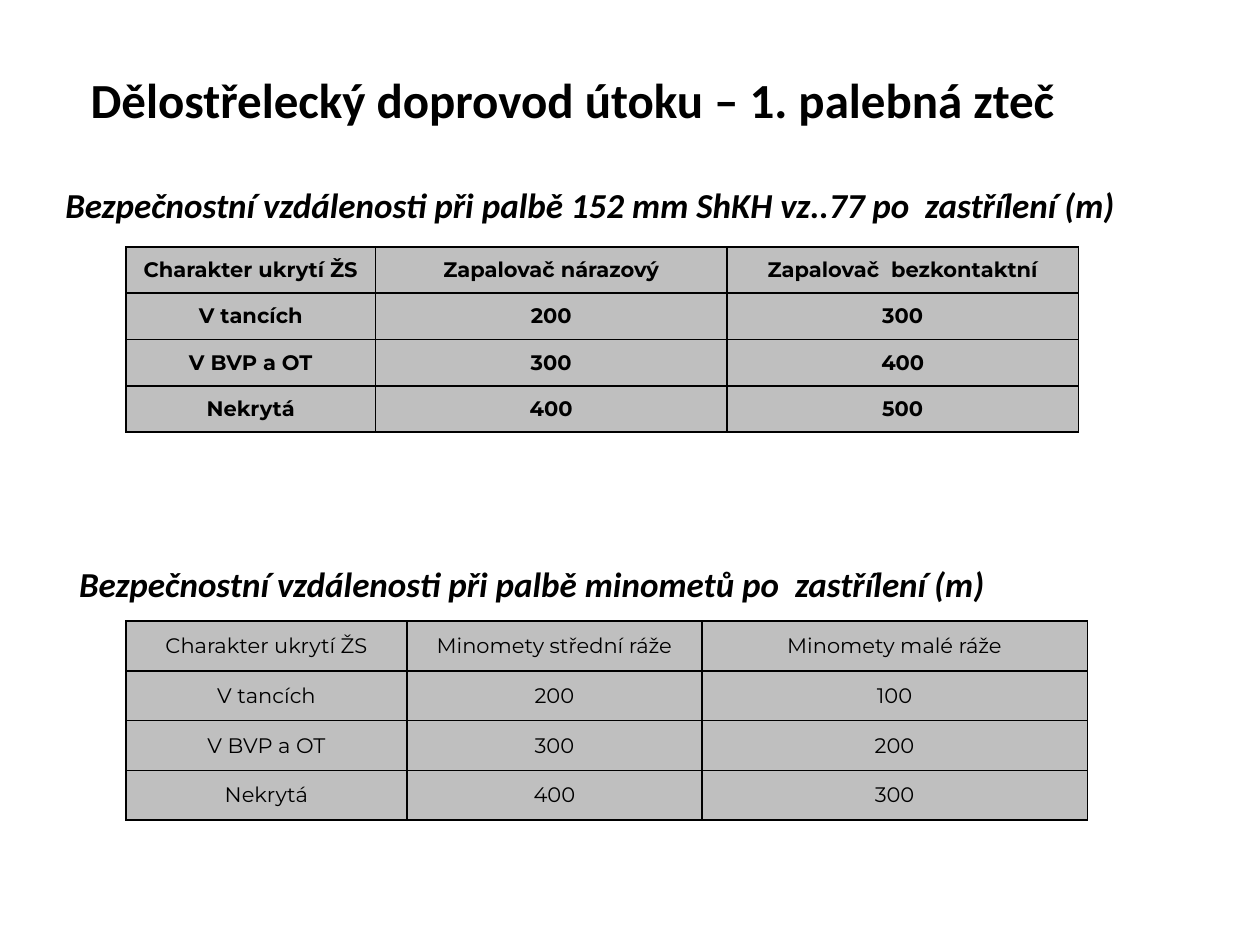
"""Build a slide with two tables of safety distances for artillery fire."""
from dataclasses import dataclass

import lxml.etree
import pptx
import pptx.dml.color
import pptx.enum.text
import pptx.oxml.ns
import pptx.util

COLORS = {"page": "FFFFFF", "ink": "000000", "cell": "BFBFBF"}
WIDTH = pptx.util.Inches(10)
HEIGHT = pptx.util.Inches(7.5)
MIDDLE = pptx.enum.text.MSO_ANCHOR.MIDDLE
TOP = pptx.enum.text.MSO_ANCHOR.TOP


@dataclass(frozen=True)
class Style:
    font: str
    size: int
    bold: bool = False
    italic: bool = False


@dataclass(frozen=True)
class Heading:
    text: str
    left: float
    top: float
    width: float
    height: float
    style: Style
    indent: float = 0
    wrap: bool = True
    anchor: pptx.enum.text.MSO_ANCHOR = MIDDLE


@dataclass(frozen=True)
class DistanceTable:
    left: float
    top: float
    columns: tuple[float, ...]
    row_height: float
    style: Style
    rows: tuple[tuple[str, ...], ...]


TITLE = Style("Calibri", 28, bold=True)
CAPTION = Style("Calibri", 20, bold=True, italic=True)

HEADINGS = (
    Heading("Dělostřelecký doprovod útoku – 1. palebná zteč",
            6.2, 6.67, 83.5, 7.6, TITLE, wrap=False, anchor=TOP),
    Heading("Bezpečnostní vzdálenosti při palbě 152 mm ShKH vz..77 po  zastřílení (m)",
            1.2, 18.67, 90.6, 5.87, CAPTION, indent=3),
    Heading("Bezpečnostní vzdálenosti při palbě minometů po  zastřílení (m)",
            2.8, 58.8, 79.6, 5.87, CAPTION, indent=2.5),
)

TABLES = (
    DistanceTable(10, 26.13, (19.8, 27.9, 27.9), 4.9, Style("Montserrat", 12, bold=True), (
        ("Charakter ukrytí ŽS", "Zapalovač nárazový", "Zapalovač  bezkontaktní"),
        ("V tancích", "200", "300"),
        ("V BVP a OT", "300", "400"),
        ("Nekrytá", "400", "500"),
    )),
    DistanceTable(10, 65.73, (22.3, 23.4, 30.6), 5.27, Style("Montserrat", 12), (
        ("Charakter ukrytí ŽS", "Minomety střední ráže", "Minomety malé ráže"),
        ("V tancích", "200", "100"),
        ("V BVP a OT", "300", "200"),
        ("Nekrytá", "400", "300"),
    )),
)


def across(percent: float) -> int:
    return round(WIDTH * percent / 100)


def down(percent: float) -> int:
    return round(HEIGHT * percent / 100)


def color(name: str) -> pptx.dml.color.RGBColor:
    return pptx.dml.color.RGBColor.from_string(COLORS[name])


def add_span(para, text: str, style: Style) -> None:
    span = para.add_run()
    span.text = text
    span.font.name = style.font
    span.font.size = pptx.util.Pt(style.size)
    span.font.bold = style.bold
    span.font.italic = style.italic
    span.font.color.rgb = color("ink")


def draw_heading(page, heading: Heading) -> None:
    box = page.shapes.add_textbox(across(heading.left), down(heading.top),
                                  across(heading.width), down(heading.height))
    frame = box.text_frame
    frame.word_wrap = heading.wrap
    frame.vertical_anchor = heading.anchor
    para = frame.paragraphs[0]
    para._p.get_or_add_pPr().set("indent", str(across(heading.indent)))
    add_span(para, heading.text, heading.style)


def add_borders(cell) -> None:
    properties = cell._tc.get_or_add_tcPr()
    for position, side in enumerate(("lnL", "lnR", "lnT", "lnB")):
        line = lxml.etree.Element(pptx.oxml.ns.qn(f"a:{side}"), w=str(pptx.util.Pt(1)))
        fill = lxml.etree.SubElement(line, pptx.oxml.ns.qn("a:solidFill"))
        lxml.etree.SubElement(fill, pptx.oxml.ns.qn("a:srgbClr"), val=COLORS["ink"])
        properties.insert(position, line)


def fill_cell(cell, text: str, style: Style) -> None:
    cell.fill.solid()
    cell.fill.fore_color.rgb = color("cell")
    cell.vertical_anchor = MIDDLE
    cell.margin_left = cell.margin_right = pptx.util.Inches(0.05)
    cell.margin_top = cell.margin_bottom = 0
    para = cell.text_frame.paragraphs[0]
    para.alignment = pptx.enum.text.PP_ALIGN.CENTER
    add_span(para, text, style)
    add_borders(cell)


def draw_table(page, distances: DistanceTable) -> None:
    row_count = len(distances.rows)
    table = page.shapes.add_table(
        row_count, len(distances.columns), across(distances.left), down(distances.top),
        across(sum(distances.columns)), down(distances.row_height * row_count)).table
    for column, width in zip(table.columns, distances.columns):
        column.width = across(width)
    for row, texts in zip(table.rows, distances.rows):
        row.height = down(distances.row_height)
        for cell, text in zip(row.cells, texts):
            fill_cell(cell, text, distances.style)


def main() -> None:
    deck = pptx.Presentation()
    deck.slide_width, deck.slide_height = WIDTH, HEIGHT
    page = deck.slides.add_slide(deck.slide_layouts[6])
    page.background.fill.solid()
    page.background.fill.fore_color.rgb = color("page")
    for heading in HEADINGS:
        draw_heading(page, heading)
    for distances in TABLES:
        draw_table(page, distances)
    deck.save("out.pptx")


if __name__ == "__main__":
    main()
